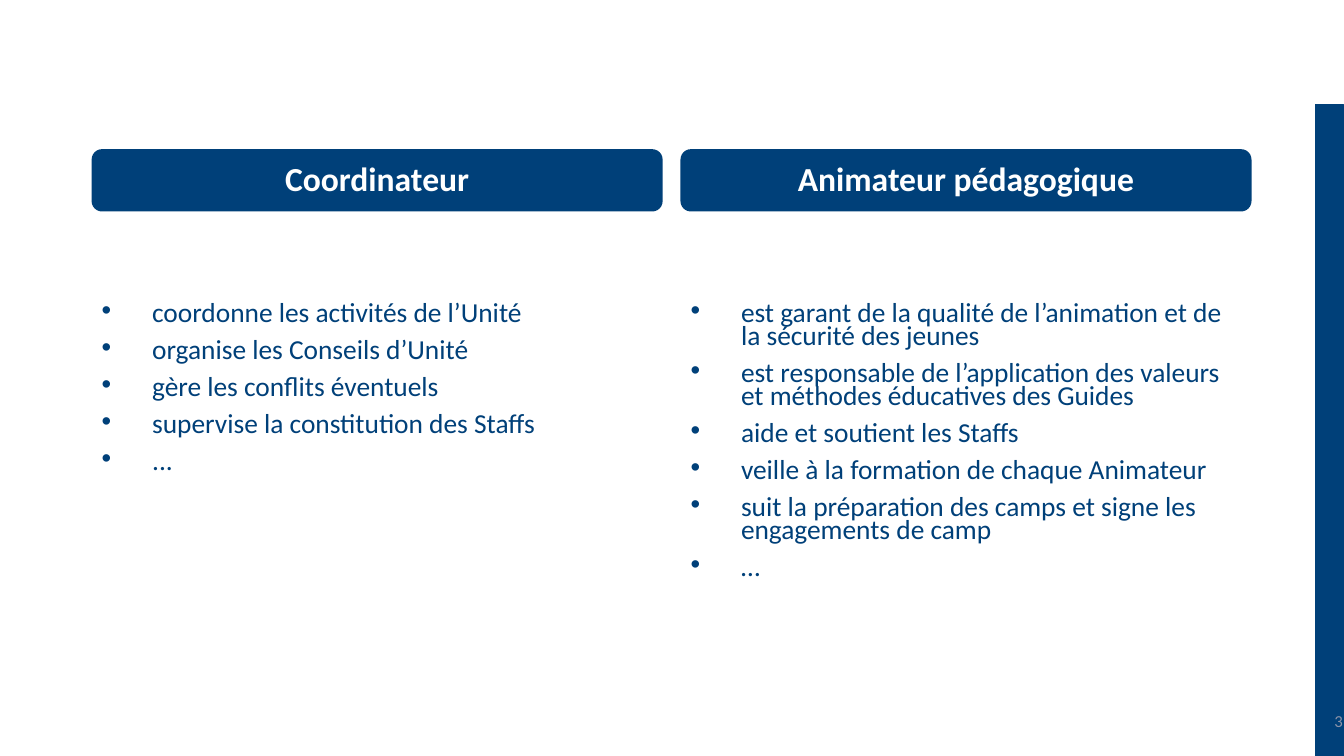
from dataclasses import dataclass

from lxml.etree import SubElement
from pptx import Presentation
from pptx.dml.color import RGBColor
from pptx.enum.shapes import MSO_SHAPE
from pptx.enum.text import MSO_ANCHOR, MSO_AUTO_SIZE, PP_ALIGN
from pptx.oxml.ns import qn
from pptx.util import Cm, Pt


@dataclass(frozen=True)
class Theme:
    font: str = "Calibri"
    navy: RGBColor = RGBColor(0x00, 0x40, 0x79)
    white: RGBColor = RGBColor(0xFF, 0xFF, 0xFF)
    grey: RGBColor = RGBColor(0x8C, 0x93, 0xA8)
    heading_size: Pt = Pt(24)
    list_size: Pt = Pt(19.6)
    number_size: Pt = Pt(12)
    paragraph_gap: Pt = Pt(10)


THEME = Theme()
COLUMN_WIDTH = Cm(14.39)
COLUMNS = [
    (Cm(2.31), 1, 2, "Coordinateur", [
        "coordonne les activités de l’Unité",
        "organise les Conseils d’Unité",
        "gère les conflits éventuels",
        "supervise la constitution des Staffs",
        "...",
    ]),
    (Cm(17.15), 3, 4, "Animateur pédagogique", [
        "est garant de la qualité de l’animation et de la sécurité des jeunes",
        "est responsable de l’application des valeurs et méthodes éducatives des Guides",
        "aide et soutient les Staffs",
        "veille à la formation de chaque Animateur",
        "suit la préparation des camps et signe les engagements de camp",
        "…",
    ]),
]


def place(shape, left, top, width, height):
    shape.left, shape.top, shape.width, shape.height = left, top, width, height


def add_run(paragraph, text, size, color, bold=False):
    run = paragraph.add_run()
    run.text = text
    run.font.name = THEME.font
    run.font.size = size
    run.font.bold = bold
    run.font.color.rgb = color


def add_bullet(paragraph):
    properties = paragraph._p.get_or_add_pPr()
    properties.set("marL", str(Cm(1.27)))
    properties.set("indent", str(-Cm(1.27)))
    SubElement(properties, qn("a:buFont"), typeface="Arial")
    SubElement(properties, qn("a:buChar"), char="•")


def fill_heading(shape, left, text):
    place(shape, left, Cm(3.76), COLUMN_WIDTH, Cm(1.57))
    geometry = SubElement(shape._element.spPr, qn("a:prstGeom"), prst="roundRect")
    SubElement(geometry, qn("a:avLst"))
    shape.fill.solid()
    shape.fill.fore_color.rgb = THEME.navy
    frame = shape.text_frame
    frame.auto_size = MSO_AUTO_SIZE.NONE
    frame.vertical_anchor = MSO_ANCHOR.MIDDLE
    paragraph = frame.paragraphs[0]
    paragraph.alignment = PP_ALIGN.CENTER
    paragraph.line_spacing = 0.9
    paragraph.space_before = Pt(0)
    add_run(paragraph, text, THEME.heading_size, THEME.white, bold=True)


def fill_list(shape, left, items):
    place(shape, left, Cm(6.25), COLUMN_WIDTH, Cm(9.14))
    frame = shape.text_frame
    frame.auto_size = MSO_AUTO_SIZE.NONE
    frame.vertical_anchor = MSO_ANCHOR.TOP
    frame.margin_top = Cm(1.4)
    for index, item in enumerate(items):
        paragraph = frame.add_paragraph() if index else frame.paragraphs[0]
        add_bullet(paragraph)
        paragraph.line_spacing = 0.7
        paragraph.space_before = THEME.paragraph_gap if index else Pt(0)
        add_run(paragraph, item, THEME.list_size, THEME.navy)


def add_side_bar(slide):
    bar = slide.shapes.add_shape(
        MSO_SHAPE.RECTANGLE, Cm(33.15), Cm(2.64), Cm(0.71), Cm(16.41))
    bar.shadow.inherit = False
    bar.fill.solid()
    bar.fill.fore_color.rgb = THEME.navy
    bar.line.color.rgb = THEME.navy
    bar.line.width = Pt(1)


def add_slide_number(slide, number):
    box = slide.shapes.add_textbox(Cm(26.47), Cm(17.65), Cm(7.62), Cm(1.02))
    frame = box.text_frame
    frame.word_wrap = True
    frame.vertical_anchor = MSO_ANCHOR.MIDDLE
    paragraph = frame.paragraphs[0]
    paragraph.alignment = PP_ALIGN.RIGHT
    add_run(paragraph, number, THEME.number_size, THEME.grey)


def main():
    presentation = Presentation()
    presentation.slide_width = Cm(33.87)
    presentation.slide_height = Cm(19.05)
    comparison_layout = presentation.slide_layouts[4]
    slide = presentation.slides.add_slide(comparison_layout)
    title = slide.shapes.title._element
    title.getparent().remove(title)

    placeholders = {shape.placeholder_format.idx: shape for shape in slide.placeholders}
    add_side_bar(slide)
    for left, heading_index, list_index, heading, items in COLUMNS:
        fill_heading(placeholders[heading_index], left, heading)
        fill_list(placeholders[list_index], left, items)
    add_slide_number(slide, "3")
    presentation.save("out.pptx")


if __name__ == "__main__":
    main()
